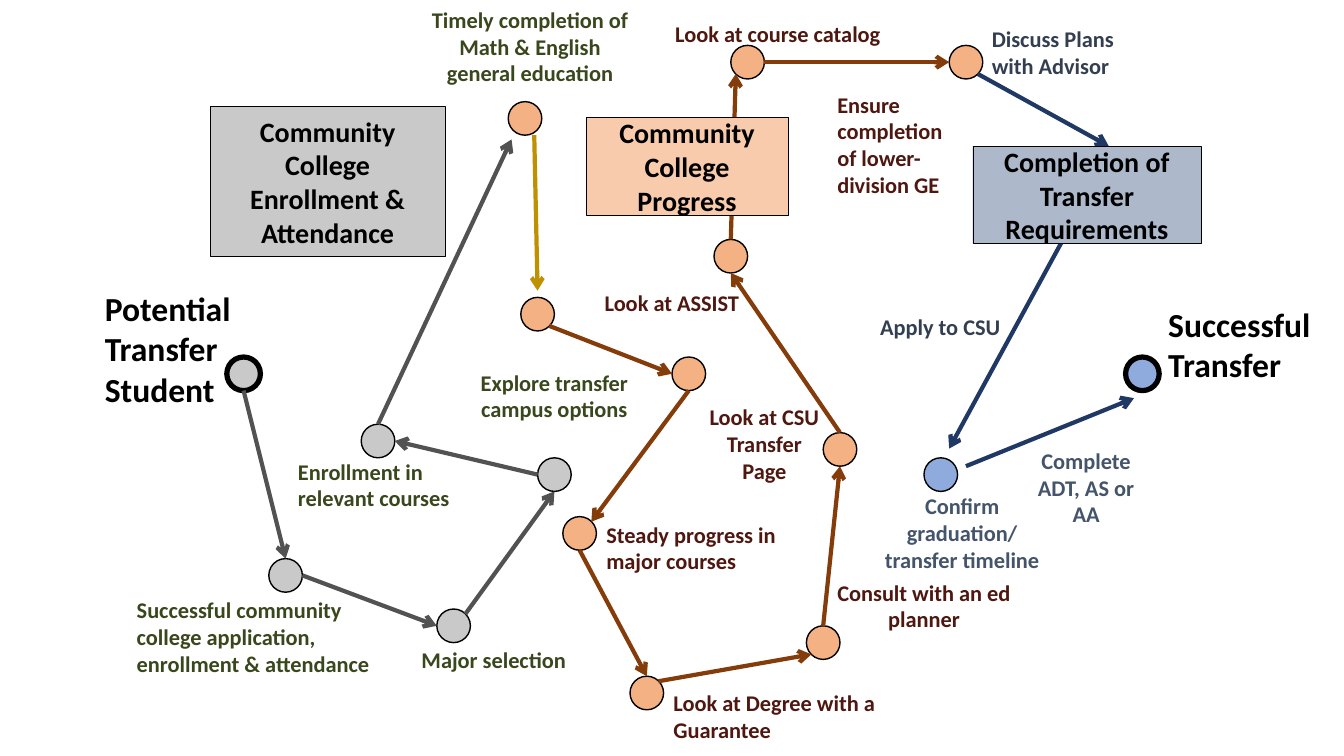
import pptx
import pptx.util
import pptx.dml.color
import pptx.enum.shapes
import pptx.enum.text
import pptx.oxml.ns
import lxml.etree

COLUMNS, ROWS = 160, 90
STOP_SIZE = 4
FONT = "Calibri"
COLORS = {
    "black": "000000", "gray": "C9C9C9", "orange": "F4B183", "blue": "8FAADC",
    "peach": "F8CBAD", "steel": "ADB9CA",
    "charcoal": "525252", "brown": "843C0B", "navy": "203864", "gold": "BF9000",
    "maroon": "4E1710", "green": "39471D", "slate": "44546A", "ink": "333F50",
}
# Share of a stop's width and height at which an arrow meets its rim
SIDES = {
    "top": (0.5, 0), "bottom": (0.5, 1), "left": (0, 0.5), "right": (1, 0.5),
    "top right": (0.85, 0.15), "bottom left": (0.15, 0.85),
    "bottom right": (0.85, 0.85),
}

# name: column, row, fill, outline width
STOPS = {
    "potential": (27, 42.5, "gray", 3.75),
    "application": (32, 66.5, "gray", 1),
    "major": (52, 72.5, "gray", 1),
    "selected": (64, 54.5, "gray", 1),
    "enrollment": (43, 50.5, "gray", 1),
    "general education": (60.5, 12.1, "orange", 1),
    "timely": (62, 35.4, "orange", 1),
    "explore": (80, 42.5, "orange", 1),
    "steady": (67, 61.5, "orange", 1),
    "degree": (75, 80.5, "orange", 1),
    "planner": (96, 74.5, "orange", 1),
    "transfer page": (98, 51.5, "orange", 1),
    "assist": (85, 28.5, "orange", 1),
    "catalog": (87, 5.4, "orange", 1),
    "advisor": (113, 5.4, "orange", 1),
    "confirm": (110, 54.5, "blue", 1),
    "successful": (134, 42.5, "blue", 3.75),
}

# start, end, color; each end is a stop with a side, or a column with a row
ARROWS = [
    (("potential", "bottom"), ("application", "top"), "charcoal"),
    (("application", "right"), ("major", "left"), "charcoal"),
    (("major", "top right"), ("selected", "bottom"), "charcoal"),
    (("selected", "left"), ("enrollment", "right"), "charcoal"),
    (("enrollment", "top"), (60.9, 16.6), "charcoal"),
    ((63.6, 16.1), (64, 34.6), "gold"),
    (("timely", "bottom right"), ("explore", "left"), "brown"),
    (("explore", "bottom"), ("steady", "top right"), "brown"),
    (("steady", "bottom"), ("degree", "top"), "brown"),
    (("degree", "top right"), ("planner", "bottom left"), "brown"),
    (("planner", "top"), ("transfer page", "bottom"), "brown"),
    (("transfer page", "top"), ("assist", "bottom"), "brown"),
    (("assist", "top"), ("catalog", "bottom left"), "brown"),
    (("catalog", "right"), ("advisor", "left"), "brown"),
    (("advisor", "bottom right"), (132, 17.4), "navy"),
    ((130, 22.2), (113, 53.4), "navy"),
    ((115, 55.5), (135, 47.4), "navy"),
]

# text, column, row, width, height, fill
STAGES = [
    ("Community College Enrollment & Attendance", 25, 12.7, 28, 17.8, "gray"),
    ("Community College Progress", 69.8, 14, 24, 11.6, "peach"),
    ("Completion of Transfer Requirements", 115.8, 17.4, 27.2, 11.6, "steel"),
]

# paragraphs, column, row, width, lines, color, alignment
LABELS = [
    (["Successful community college application, enrollment & attendance"],
     15.1, 70.4, 32.9, 3, "green", "LEFT"),
    (["Major selection"], 49, 76.3, 24, 1, "green", "LEFT"),
    (["Enrollment in relevant courses"], 34.3, 53.9, 24, 2, "green", "LEFT"),
    (["Timely completion of", "Math & English general education"],
     49.6, 0.1, 27, 3, "green", "CENTER"),
    (["Explore transfer campus options"], 54, 43.3, 24, 2, "green", "CENTER"),
    (["Steady progress in major courses"], 71, 61.4, 25, 2, "maroon", "LEFT"),
    (["Look at Degree with a Guarantee"], 79, 81.5, 30, 2, "maroon", "LEFT"),
    (["Consult with an ed planner"], 98, 68.3, 24, 2, "maroon", "CENTER"),
    (["Look at CSU Transfer Page"], 83, 47.4, 16, 3, "maroon", "CENTER"),
    (["Look at ASSIST"], 68, 33.8, 24, 1, "maroon", "CENTER"),
    (["Look at course catalog"], 76.2, 1.8, 32.8, 1, "maroon", "CENTER"),
    (["Ensure completion of lower-division GE"],
     98.5, 10.2, 16, 4, "maroon", "LEFT"),
    (["Discuss Plans with Advisor"], 116.9, 2.4, 17, 2, "ink", "LEFT"),
    (["Apply to CSU"], 103.6, 36.7, 17, 1, "ink", "LEFT"),
    (["Confirm graduation/ transfer timeline"],
     103.4, 58, 22.3, 3, "slate", "CENTER"),
    (["Complete ADT, AS or AA"], 120.8, 52.6, 17, 3, "slate", "CENTER"),
]

# text, column, row, width, lines
ENDPOINTS = [
    ("Potential Transfer Student", 11.3, 33.7, 20.4, 3),
    ("Successful Transfer", 137.9, 35.6, 20.9, 2),
]


def color(name):
    return pptx.dml.color.RGBColor.from_string(COLORS[name])


def anchor(end):
    """Return the column and row of an arrow's end."""
    place, side = end
    if place not in STOPS:
        return end
    column, row = STOPS[place][:2]
    across, down = SIDES[side]
    return column + across * STOP_SIZE, row + down * STOP_SIZE


class RoadMap:
    """Draws on one slide, with lengths in grid columns and rows."""

    def __init__(self, presentation):
        self.cell = pptx.util.Inches(1 / 12)
        presentation.slide_width = COLUMNS * self.cell
        presentation.slide_height = ROWS * self.cell
        self.slide = presentation.slides.add_slide(presentation.slide_layouts[6])

    def cells(self, *lengths):
        return [round(length * self.cell) for length in lengths]

    def add_text(self, frame, paragraphs, size, ink, alignment):
        frame.word_wrap = True
        for index, text in enumerate(paragraphs):
            paragraph = frame.add_paragraph() if index else frame.paragraphs[0]
            paragraph.alignment = pptx.enum.text.PP_ALIGN[alignment]
            run = paragraph.add_run()
            run.text = text
            run.font.name = FONT
            run.font.size = pptx.util.Pt(size)
            run.font.bold = True
            run.font.color.rgb = color(ink)

    def shape(self, kind, column, row, width, height, fill, outline):
        shape = self.slide.shapes.add_shape(
            kind, *self.cells(column, row, width, height))
        shape.shadow.inherit = False
        shape.fill.solid()
        shape.fill.fore_color.rgb = color(fill)
        shape.line.color.rgb = color("black")
        shape.line.width = pptx.util.Pt(outline)
        return shape

    def stop(self, column, row, fill, outline):
        self.shape(pptx.enum.shapes.MSO_SHAPE.OVAL, column, row,
                   STOP_SIZE, STOP_SIZE, fill, outline)

    def stage(self, text, column, row, width, height, fill):
        box = self.shape(pptx.enum.shapes.MSO_SHAPE.RECTANGLE, column, row,
                         width, height, fill, 0.25)
        box.text_frame.vertical_anchor = pptx.enum.text.MSO_ANCHOR.MIDDLE
        self.add_text(box.text_frame, [text], 20, "black", "CENTER")

    def label(self, paragraphs, column, row, width, lines, ink, alignment, size=16):
        height = lines * size * 0.2 + 1.2
        box = self.slide.shapes.add_textbox(*self.cells(column, row, width, height))
        self.add_text(box.text_frame, paragraphs, size, ink, alignment)
        box.text_frame.auto_size = pptx.enum.text.MSO_AUTO_SIZE.SHAPE_TO_FIT_TEXT

    def arrow(self, start, end, ink):
        connector = self.slide.shapes.add_connector(
            pptx.enum.shapes.MSO_CONNECTOR.STRAIGHT,
            *self.cells(*anchor(start), *anchor(end)))
        connector.line.color.rgb = color(ink)
        connector.line.width = pptx.util.Pt(3)
        qualify = pptx.oxml.ns.qn
        properties = connector.element.spPr
        line = properties.find(qualify("a:ln"))
        lxml.etree.SubElement(line, qualify("a:tailEnd"), type="arrow")
        lxml.etree.SubElement(properties, qualify("a:effectLst"))


def main():
    presentation = pptx.Presentation()
    road_map = RoadMap(presentation)
    for stop in STOPS.values():
        road_map.stop(*stop)
    for arrow in ARROWS:
        road_map.arrow(*arrow)
    for stage in STAGES:
        road_map.stage(*stage)
    for label in LABELS:
        road_map.label(*label)
    for text, *place in ENDPOINTS:
        road_map.label([text], *place, "black", "LEFT", size=24)
    presentation.save("out.pptx")


if __name__ == "__main__":
    main()
